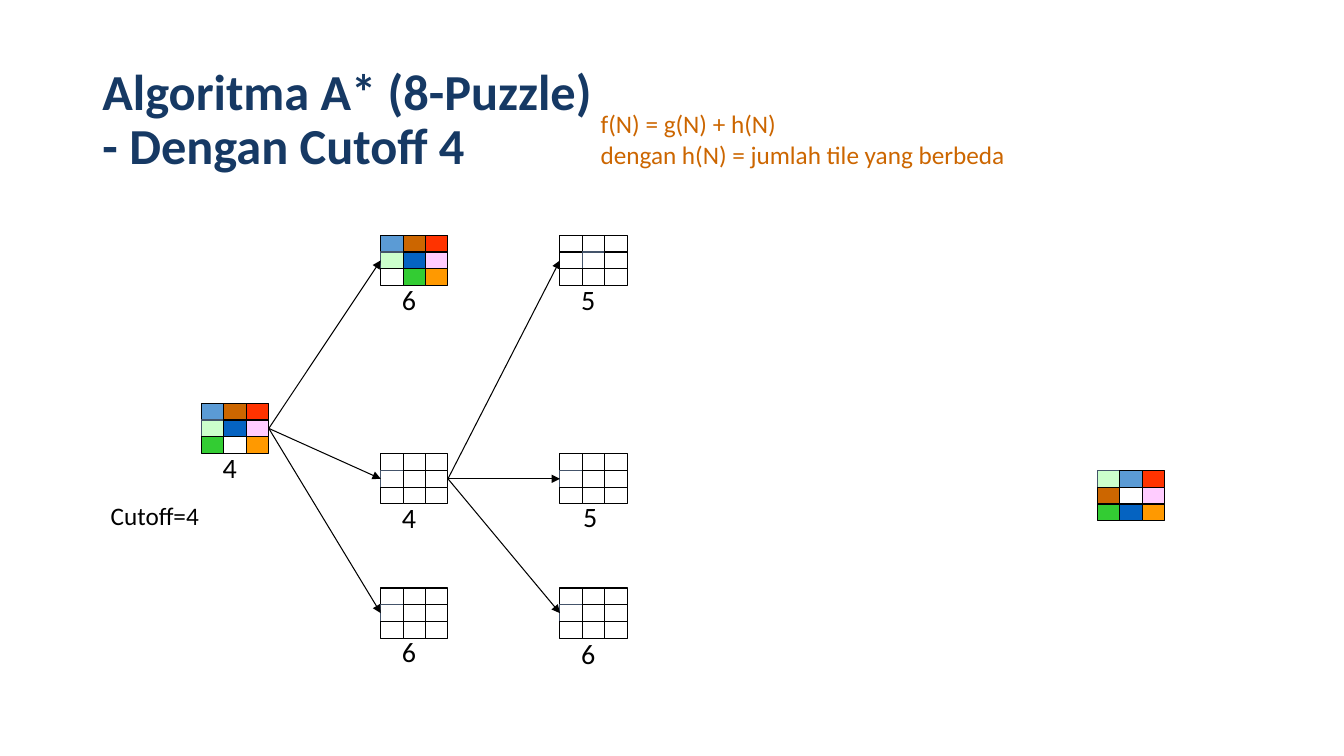
from lxml import etree
from pptx import Presentation
from pptx.dml.color import RGBColor
from pptx.enum import shapes, text
from pptx.oxml import ns
from pptx.util import Pt

CELL_W, CELL_H = 16, 12
BOARD_W, BOARD_H = 3 * CELL_W, 3 * CELL_H
COLUMNS = (144, 272, 400)
GOAL_AT = (784, 336)
TILES = {
    "1": ("5B9BD5", "000000"), "2": ("CC6600", "000000"),
    "3": ("FF3300", "000000"), "4": ("CCFFCC", "44546A"),
    "5": ("0563C1", "000000"), "6": ("FFCCFF", "000000"),
    "7": ("33CC33", "000000"), "8": ("FF9900", "000000"),
    "-": ("FFFFFF", "000000"), "x": ("FFFFFF", "44546A"),
}
BLANK = "---x-----"
START = (COLUMNS[0], 288)
MIDDLE = (COLUMNS[1], 324)
NODES = [
    (START, "1234567-8", "4", (8, 30), None),
    (MIDDLE, BLANK, "4", (8, 30), START),
    ((COLUMNS[1], 420), BLANK, "6", (8, 30), START),
    ((COLUMNS[1], 168), "123456-78", "6", (8, 30), START),
    ((COLUMNS[2], 420), BLANK, "6", (8, 31), MIDDLE),
    ((COLUMNS[2], 324), BLANK, "5", (9.5, 29.5), MIDDLE),
    ((COLUMNS[2], 168), "----x----", "5", (8, 30), MIDDLE),
]


def color(value):
    """Turn a hex string into a colour."""
    return RGBColor.from_string(value)


def style(font, size, fill, **values):
    """Apply size, colour and further format values to a font."""
    for name, value in dict(name="Calibri", size=Pt(size), **values).items():
        setattr(font, name, value)
    font.color.rgb = color(fill)


def add_title(slide, box, lines):
    """Place the slide title with one line break between its lines."""
    sp = slide.shapes.title
    for name, value in zip(("left", "top", "width", "height"), box):
        setattr(sp, name, Pt(value))
    tf = sp.text_frame
    tf.auto_size = text.MSO_AUTO_SIZE.NONE
    tf.vertical_anchor = text.MSO_ANCHOR.MIDDLE
    p = tf.paragraphs[0]
    p.alignment, p.line_spacing = text.PP_ALIGN.LEFT, 0.9
    for i, line in enumerate(lines):
        if i:
            p.add_line_break()
        r = p.add_run()
        r.text = line
        style(r.font, 36, "163964", bold=True)


def add_note(parent, box, lines, size, fill="000000"):
    """Place an unwrapped text box with one paragraph for each line."""
    sp = parent.shapes.add_textbox(*map(Pt, box))
    tf = sp.text_frame
    tf.word_wrap = False
    tf.auto_size = text.MSO_AUTO_SIZE.SHAPE_TO_FIT_TEXT
    for i, line in enumerate(lines):
        p = tf.add_paragraph() if i else tf.paragraphs[0]
        r = p.add_run()
        r.text = line
        style(r.font, size, fill)
    return sp


def add_board(parent, at, state):
    """Draw the nine tiles of a puzzle state from its top left corner."""
    left, top = at
    for i, tile in enumerate(state):
        row, col = divmod(i, 3)
        sp = parent.shapes.add_shape(
            shapes.MSO_SHAPE.RECTANGLE, Pt(left + col * CELL_W),
            Pt(top + row * CELL_H), Pt(CELL_W), Pt(CELL_H))
        fill, border = TILES[tile]
        sp.shadow.inherit = False
        sp.fill.solid()
        sp.fill.fore_color.rgb = color(fill)
        sp.line.color.rgb = color(border)
        sp.line.width = Pt(0.75)


def add_arrow(parent, source, target):
    """Join the right side of one board to the left side of another."""
    ends = (source[0] + BOARD_W, source[1] + BOARD_H / 2,
            target[0], target[1] + BOARD_H / 2)
    cx = parent.shapes.add_connector(
        shapes.MSO_CONNECTOR.STRAIGHT, *map(Pt, ends))
    cx.line.color.rgb = color("000000")
    cx.line.width = Pt(0.75)
    ln = cx.line._get_or_add_ln()
    etree.SubElement(ln, ns.qn("a:tailEnd"), type="triangle")
    etree.SubElement(cx._element.spPr, ns.qn("a:effectLst"))


def add_node(slide, at, state, cost, offset, source):
    """Group a board with its cost and the arrow from its parent."""
    grp = slide.shapes.add_group_shape()
    box = (at[0] + offset[0], at[1] + offset[1], 24.5, 31.5)
    label = add_note(grp, box, [cost], 20)
    label.fill.solid()
    label.fill.fore_color.rgb = color("FFFFFF")
    add_board(grp, at, state)
    if source:
        add_arrow(grp, source, at)


def main():
    """Build the search tree slide and save it."""
    prs = Presentation()
    prs.slide_width, prs.slide_height = Pt(960), Pt(540)
    slide = prs.slides.add_slide(prs.slide_layouts[5])
    add_title(slide, (66, 40, 828, 93),
              ["Algoritma A* (8-Puzzle)", "- Dengan Cutoff 4"])
    add_note(slide, (422, 74, 307, 51),
             ["f(N) = g(N) + h(N)", "dengan h(N) = jumlah tile yang berbeda"],
             18, "CC6600")
    add_note(slide, (72, 354, 78.5, 29), ["Cutoff=4"], 18)
    for node in NODES:
        add_node(slide, *node)
    add_board(slide.shapes.add_group_shape(), GOAL_AT, "4132-6758")
    prs.save("out.pptx")


if __name__ == "__main__":
    main()
